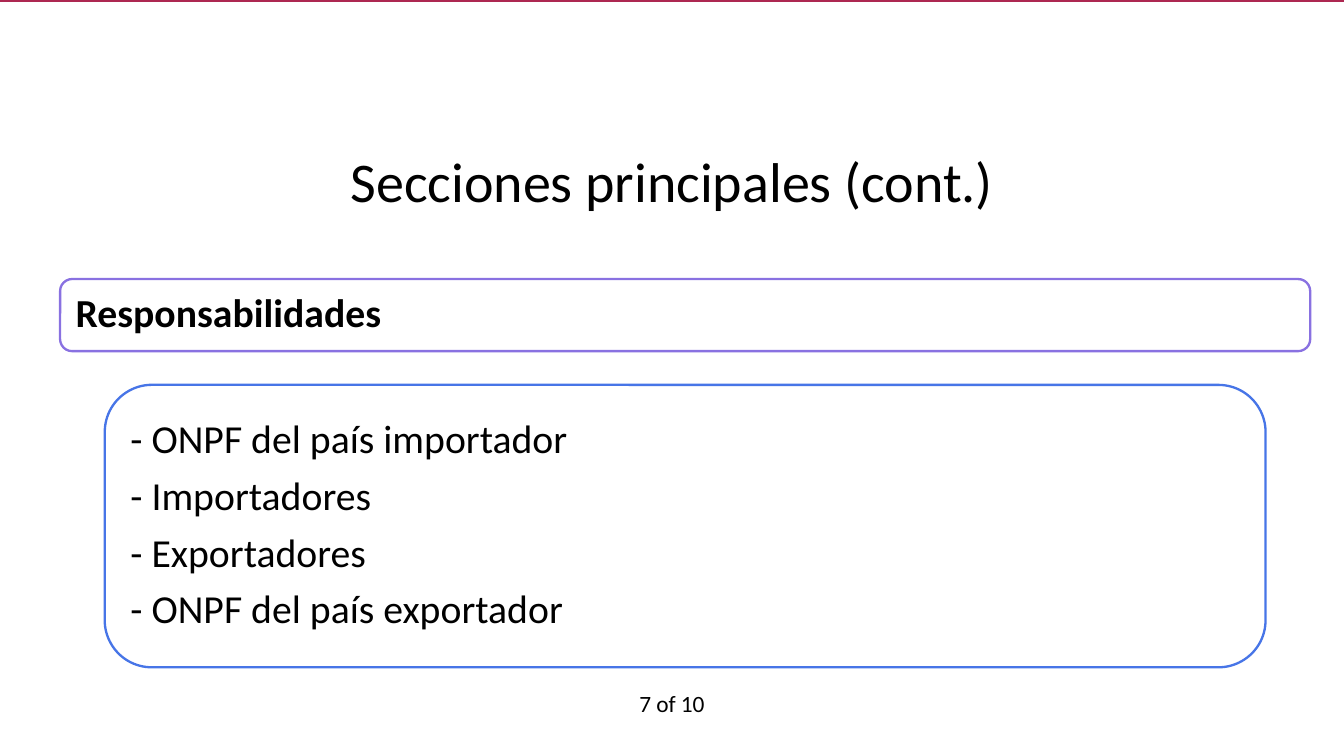
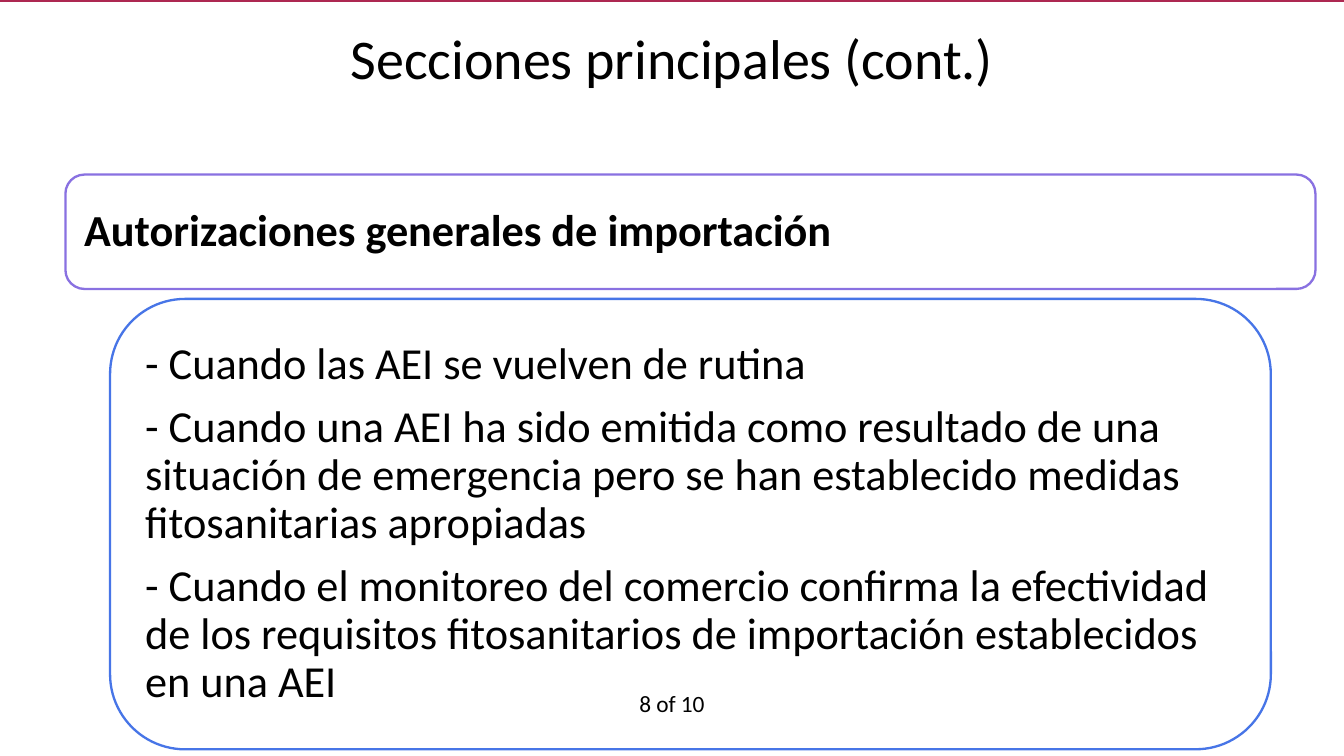
from dataclasses import dataclass

from pptx import Presentation
from pptx.dml.color import RGBColor
from pptx.enum.shapes import MSO_SHAPE
from pptx.enum.text import MSO_ANCHOR, MSO_AUTO_SIZE, PP_ALIGN
from pptx.util import Cm, Pt

RECT, ROUND = MSO_SHAPE.RECTANGLE, MSO_SHAPE.ROUNDED_RECTANGLE
TOP, MIDDLE = MSO_ANCHOR.TOP, MSO_ANCHOR.MIDDLE
LEFT, CENTER = PP_ALIGN.LEFT, PP_ALIGN.CENTER
GROW = MSO_AUTO_SIZE.SHAPE_TO_FIT_TEXT

TITLE = "Secciones principales (cont.)"
TOTAL = 10

# Places are in centimetres; head and body are (top, height).
PAGES = [
    dict(
        page=7, title_top=1.78, left=0.91, head=(4.22, 1.09), body=(5.82, 4.27),
        size=17, inset=0.18,
        topic="Responsabilidades",
        points=[
            "- ONPF del país importador",
            "- Importadores",
            "- Exportadores",
            "- ONPF del país exportador",
        ],
    ),
    dict(
        page=8, title_top=-0.08, left=0.99, head=(2.64, 1.73), body=(4.52, 6.81),
        size=19, inset=0.2,
        topic="Autorizaciones generales de importación",
        points=[
            "- Cuando las AEI se vuelven de rutina",
            "- Cuando una AEI ha sido emitida como resultado de una situación"
            " de emergencia pero se han establecido medidas fitosanitarias"
            " apropiadas",
            "- Cuando el monitoreo del comercio confirma la efectividad de los"
            " requisitos fitosanitarios de importación establecidos en una AEI",
        ],
    ),
]

WIDE, HIGH = 20.32, 11.43
HEAD_W, BODY_W = 18.9, 17.55
PAGE_W = 1.52


@dataclass(frozen=True)
class Theme:
    font: str = "Calibri"
    ink: str = "000000"
    paper: str = "FFFFFF"
    band: str = "AD2851"
    head: str = "8971E1"
    body: str = "4775E7"
    title: int = 24
    foot: int = 10


THEME = Theme()


def write(shape, lines, size, bold=False, align=LEFT, anchor=MIDDLE,
          wrap=True, inset=None, line=None, after=None):
    """Fill a shape with one paragraph per line; after is a share of size."""
    frame = shape.text_frame
    frame.word_wrap = wrap
    frame.vertical_anchor = anchor
    if inset is not None:
        frame.margin_left = frame.margin_right = Cm(inset)
        frame.margin_top = frame.margin_bottom = Cm(inset)
    for i, text in enumerate(lines):
        para = frame.add_paragraph() if i else frame.paragraphs[0]
        para.alignment = align
        if line:
            para.line_spacing = line
        if after:
            para.space_after = Pt(round(size * after, 1))
        run = para.add_run()
        run.text = text
        run.font.name = THEME.font
        run.font.size = Pt(size)
        run.font.bold = bold
        run.font.color.rgb = RGBColor.from_string(THEME.ink)


def draw(slide, kind, left, top, wide, high, fill, edge=None):
    shape = slide.shapes.add_shape(kind, Cm(left), Cm(top), Cm(wide), Cm(high))
    shape.shadow.inherit = False
    shape.fill.solid()
    shape.fill.fore_color.rgb = RGBColor.from_string(fill)
    if edge:
        shape.line.color.rgb = RGBColor.from_string(edge)
        shape.line.width = Pt(1)
    else:
        shape.line.fill.background()
    return shape


def label(slide, left, top, wide, high):
    return slide.shapes.add_textbox(Cm(left), Cm(top), Cm(wide), Cm(high))


def build(slide, page):
    draw(slide, RECT, 0, -0.1, WIDE, 0.13, THEME.band)

    inner = page["left"] + (HEAD_W - BODY_W) / 2
    style = dict(size=page["size"], inset=page["inset"], line=0.9, after=0.35)
    head = draw(slide, ROUND, page["left"], page["head"][0], HEAD_W,
                page["head"][1], THEME.paper, THEME.head)
    write(head, [page["topic"]], bold=True, **style)
    body = draw(slide, ROUND, inner, page["body"][0], BODY_W,
                page["body"][1], THEME.paper, THEME.body)
    write(body, page["points"], **style)

    title = label(slide, 0, page["title_top"], WIDE, 1.9)
    write(title, [TITLE], THEME.title, align=CENTER)
    foot = label(slide, (WIDE - PAGE_W) / 2, 10.29, PAGE_W, 1.12)
    write(foot, [f"{page['page']} of {TOTAL}"], THEME.foot, align=CENTER,
          anchor=TOP, wrap=False)
    foot.text_frame.auto_size = GROW


def main():
    deck = Presentation()
    deck.slide_width, deck.slide_height = Cm(WIDE), Cm(HIGH)
    blank = deck.slide_layouts[6]
    for page in PAGES:
        build(deck.slides.add_slide(blank), page)
    deck.save("out.pptx")


if __name__ == "__main__":
    main()
